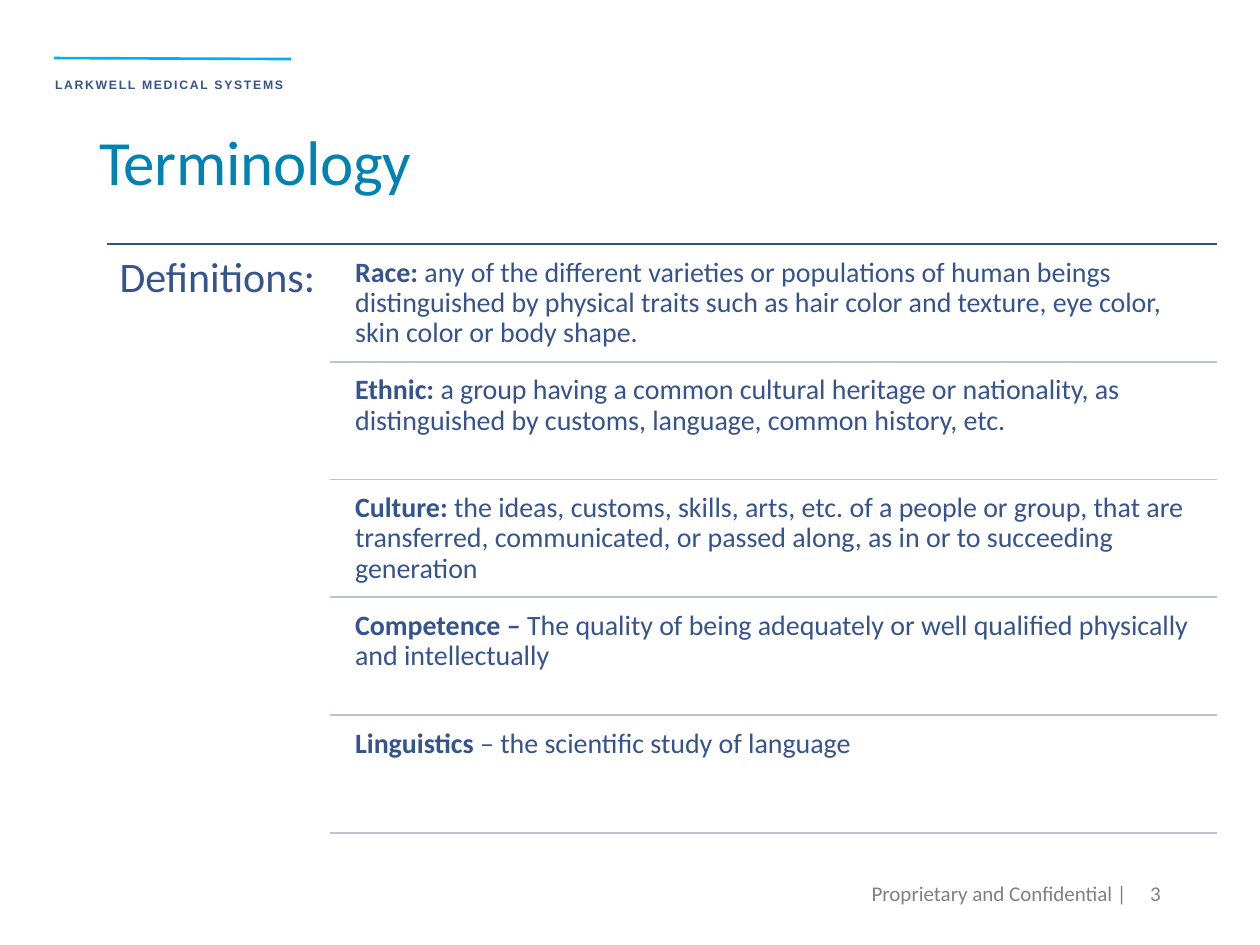
"""Builds the Terminology slide with its ruled list of definitions."""
from lxml import etree
from pptx import Presentation
from pptx.dml.color import RGBColor
from pptx.enum import shapes, text
from pptx.oxml import ns
from pptx.util import Cm, Pt

NAVY = RGBColor(0x35, 0x53, 0x8D)
TEAL = RGBColor(0x00, 0x82, 0xB2)
SKY = RGBColor(0x00, 0xB0, 0xF0)
GREY = RGBColor(0x80, 0x80, 0x80)
TOP_RULE = RGBColor(0x31, 0x51, 0x8C)
ROW_RULE = RGBColor(0xBE, 0xC2, 0xD0)

COMPANY = "LARKWELL MEDICAL SYSTEMS"
TITLE = "Terminology"
HEADING = "Definitions:"
DEFINITIONS = [
    ("Race: ", "any of the different varieties or populations of human beings "
     "distinguished by physical traits such as hair color and texture, eye color, "
     "skin color or body shape."),
    ("Ethnic: ", "a group having a common cultural heritage or nationality, as "
     "distinguished by customs, language, common history, etc."),
    ("Culture: ", "the ideas, customs, skills, arts, etc. of a people or group, that are "
     "transferred, communicated, or passed along, as in or to succeeding generation"),
    ("Competence – ", "The quality of being adequately or well qualified physically "
     "and intellectually"),
    ("Linguistics", " – the scientific study of language"),
]
CONFIDENTIALITY = "Proprietary and Confidential |"
PAGE = "3"

LEFT, RIGHT = 2.16, 24.54
LIST_TOP, LIST_BOTTOM = 4.92, 16.79
RULE_LEFT, TERM_LEFT = 6.65, 6.99
TERM_GAP = 0.11


def add_text(slide, at, content, *, bold="", size=16, color=NAVY, font="Calibri",
             align=text.PP_ALIGN.LEFT, anchor=text.MSO_ANCHOR.TOP, line=None,
             tracking=0, insets=(0.25, 0.13), wrap=True):
    """Adds a text box whose optional bold lead-in precedes its content."""
    frame = slide.shapes.add_textbox(*map(Cm, at)).text_frame
    frame.word_wrap = wrap
    frame.vertical_anchor = anchor
    frame.margin_left = frame.margin_right = Cm(insets[0])
    frame.margin_top = frame.margin_bottom = Cm(insets[1])
    paragraph = frame.paragraphs[0]
    paragraph.alignment = align
    paragraph.line_spacing = line
    for words, heavy in ((bold, True), (content, False)):
        if words:
            run = paragraph.add_run()
            run.text = words
            run.font.name, run.font.size, run.font.bold = font, Pt(size), heavy
            run.font.color.rgb = color
            if tracking:
                run._r.get_or_add_rPr().set("spc", str(round(tracking * 100)))


def add_rule(slide, start, end, color, width=1):
    """Adds a straight line without a shadow."""
    rule = slide.shapes.add_connector(shapes.MSO_CONNECTOR.STRAIGHT,
                                      *map(Cm, (*start, *end)))
    rule.line.color.rgb = color
    rule.line.width = Pt(width)
    etree.SubElement(rule._element.spPr, ns.qn("a:effectLst"))


def main():
    """Lays out the slide and saves it."""
    deck = Presentation()
    deck.slide_width, deck.slide_height = Cm(25.4), Cm(19.05)
    slide = deck.slides.add_slide(deck.slide_layouts[6])

    add_text(slide, (0.86, 1.17, 5.18, 0.74), "", bold=COMPANY, size=7, font="Arial",
             line=Pt(16), tracking=1, wrap=False)
    add_rule(slide, (1.09, 1.17), (5.87, 1.19), SKY, 1.5)
    add_text(slide, (1.75, 2.13, 21.89, 1.98), TITLE, size=36, color=TEAL, line=0.8,
             tracking=-0.2, anchor=text.MSO_ANCHOR.BOTTOM)

    add_rule(slide, (LEFT, LIST_TOP), (RIGHT, LIST_TOP), TOP_RULE)
    add_text(slide, (LEFT, LIST_TOP, 4.47, 12.01), HEADING, size=24, line=0.9,
             insets=(0.25, 0.25))
    pitch = (LIST_BOTTOM - LIST_TOP) / len(DEFINITIONS)
    for row, (term, meaning) in enumerate(DEFINITIONS):
        top = LIST_TOP + row * pitch
        bottom = top + pitch
        add_text(slide, (TERM_LEFT, top + TERM_GAP, RIGHT - TERM_LEFT, pitch - TERM_GAP),
                 meaning, bold=term, line=0.9, insets=(0.17, 0.17))
        add_rule(slide, (RULE_LEFT, bottom), (RIGHT, bottom), ROW_RULE)

    for words, left, width in ((CONFIDENTIALITY, 14.38, 8.59), (PAGE, 22.48, 1.17)):
        add_text(slide, (left, 17.5, width, 1.02), words, size=12, color=GREY,
                 align=text.PP_ALIGN.RIGHT, anchor=text.MSO_ANCHOR.MIDDLE)

    deck.save("out.pptx")


if __name__ == "__main__":
    main()
